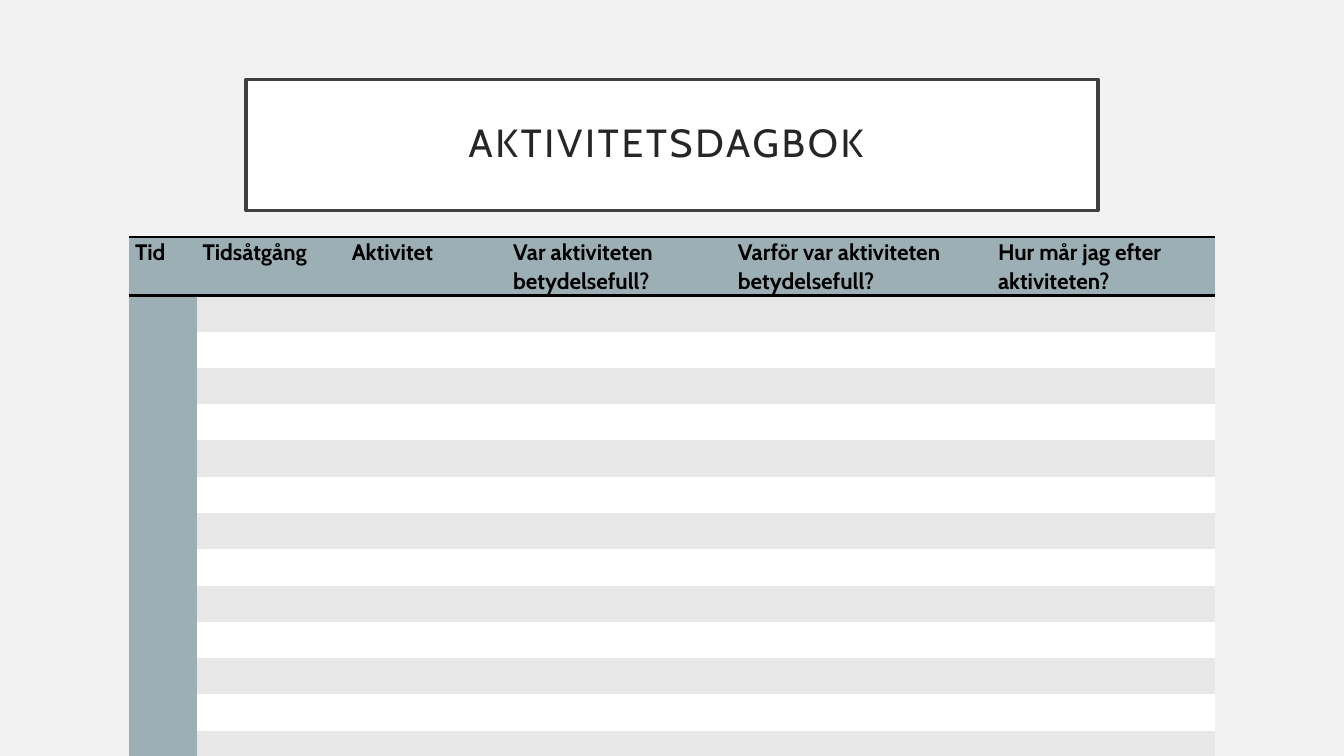
from dataclasses import dataclass

from lxml.etree import SubElement as Sub
from pptx import Presentation
from pptx.dml.color import RGBColor as RGB
from pptx.enum.shapes import MSO_SHAPE as Shape
from pptx.enum.text import MSO_ANCHOR as Anchor, PP_ALIGN as Align
from pptx.oxml.ns import qn
from pptx.util import Inches, Pt


@dataclass(frozen=True)
class Theme:
    font: str = "Cabin"
    back: str = "F2F2F2"
    white: str = "FFFFFF"
    band: str = "E7E7E7"
    head: str = "9BAFB5"
    frame: str = "404040"
    title: str = "262626"
    black: str = "000000"
    title_size: float = 28
    head_size: float = 16
    frame_width: float = 2.5
    rule_width: float = 2


THEME = Theme()
PLAIN_STYLE = "{2D5ABB26-0587-4C30-8999-92F81FD0307C}"
HEADS = ["Tid", "Tidsåtgång", "Aktivitet", "Var aktiviteten betydelsefull?",
         "Varför var aktiviteten betydelsefull?",
         "Hur mår jag efter aktiviteten?"]
WIDTHS = [0.67, 1.48, 1.6, 2.23, 2.58, 2.21]
HEAD_HEIGHT, ROW_HEIGHT, ROWS = 0.58, 0.36, 13


def paint(fill, color):
    fill.solid()
    fill.fore_color.rgb = RGB.from_string(color)


def write(frame, text, size, color, bold=False, align=Align.LEFT,
          lines=1.0, gap=0):
    para = frame.paragraphs[0]
    para.alignment = align
    para.line_spacing = lines
    run = para.add_run()
    run.text = text
    font = run.font
    font.name, font.size, font.bold = THEME.font, Pt(size), bold
    font.color.rgb = RGB.from_string(color)
    if gap:
        font._element.set("spc", str(gap * 100))


def add_rule(cell, side):
    line = Sub(cell._tc.get_or_add_tcPr(), qn(f"a:ln{side}"),
               w=str(Pt(THEME.rule_width)))
    fill = Sub(line, qn("a:solidFill"))
    Sub(fill, qn("a:srgbClr"), val=THEME.black)


# Framed title
def add_title(slide, left, top, width, height):
    box = slide.shapes.add_shape(Shape.RECTANGLE, Inches(left), Inches(top),
                                 Inches(width), Inches(height))
    box.shadow.inherit = False
    paint(box.fill, THEME.white)
    paint(box.line.fill, THEME.frame)
    box.line.width = Pt(THEME.frame_width)
    frame = box.text_frame
    frame.word_wrap = True
    frame.vertical_anchor = Anchor.MIDDLE
    frame.margin_left = frame.margin_right = Inches(0.2)
    frame.margin_top = frame.margin_bottom = Inches(0.2)
    write(frame, "AKTIVITETSDAGBOK ", THEME.title_size, THEME.title,
          align=Align.CENTER, lines=0.9, gap=2)


# Diary table: head row, time column and banded empty rows
def add_diary(slide, left, top, width, height):
    table = slide.shapes.add_table(
        ROWS + 1, len(HEADS), Inches(left), Inches(top),
        Inches(width), Inches(height)).table
    table._tbl.tblPr.find(qn("a:tableStyleId")).text = PLAIN_STYLE
    for col, size in zip(table.columns, WIDTHS):
        col.width = Inches(size)
    for r, row in enumerate(table.rows):
        row.height = Inches(ROW_HEIGHT if r else HEAD_HEIGHT)
        sides = "TB" if r == 0 else "B" if r == ROWS else ""
        for c, cell in enumerate(row.cells):
            cell.margin_left = cell.margin_right = Inches(0.06)
            cell.margin_top = cell.margin_bottom = 0
            for side in sides:
                add_rule(cell, side)
            shade = THEME.band if r % 2 else THEME.white
            paint(cell.fill, THEME.head if r == 0 or c == 0 else shade)
            if r == 0:
                write(cell.text_frame, HEADS[c], THEME.head_size,
                      THEME.black, bold=True, lines=1.07)


def main():
    deck = Presentation()
    deck.slide_width, deck.slide_height = Inches(13.33), Inches(7.5)
    slide = deck.slides.add_slide(deck.slide_layouts[6])
    paint(slide.background.fill, THEME.back)
    add_title(slide, 2.44, 0.79, 8.45, 1.3)
    add_diary(slide, 1.28, 2.35, sum(WIDTHS),
              HEAD_HEIGHT + ROWS * ROW_HEIGHT)
    deck.save("out.pptx")


if __name__ == "__main__":
    main()
